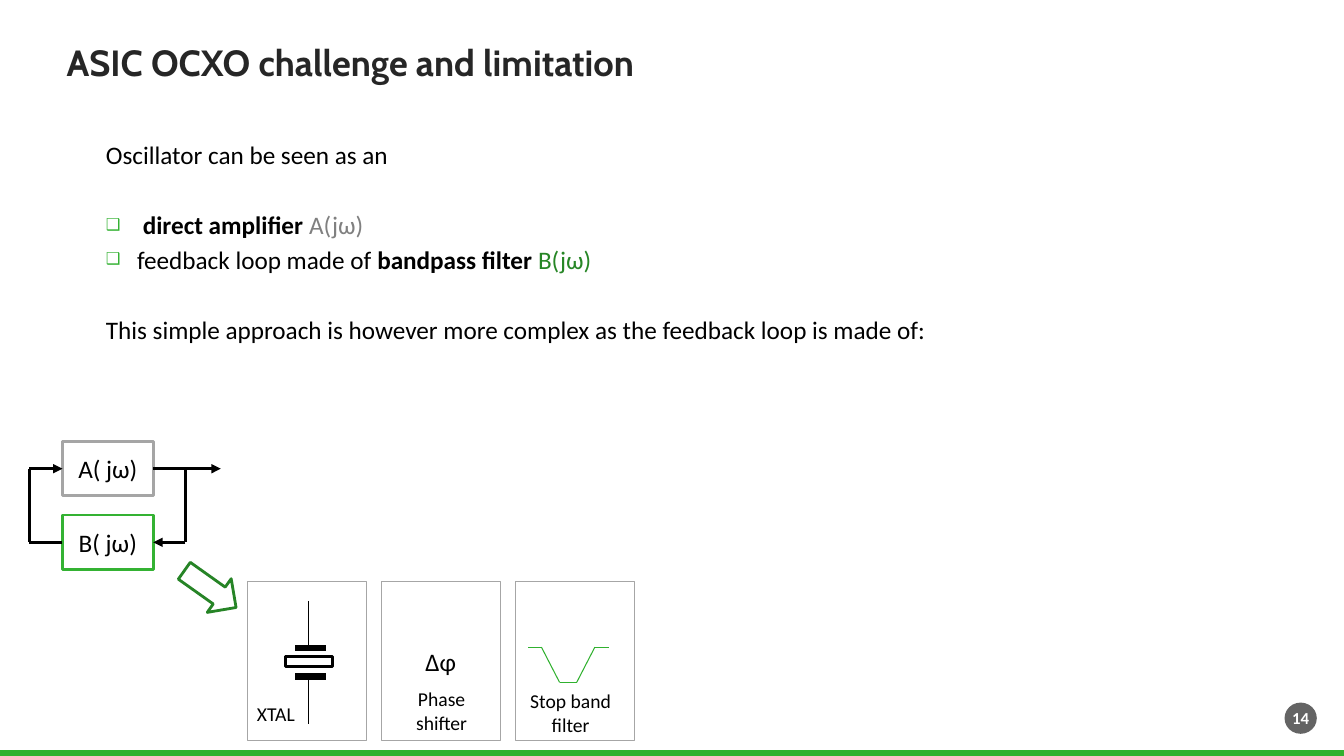
from pptx import Presentation
from pptx.dml.color import RGBColor as RGB
from pptx.enum.shapes import MSO_CONNECTOR as Conn, MSO_SHAPE as Form
from pptx.enum.text import MSO_ANCHOR as Anchor, MSO_AUTO_SIZE as Fit, PP_ALIGN as Align
from pptx.oxml.ns import qn
from pptx.util import Inches, Pt
from lxml.etree import SubElement as Sub

BLACK = RGB(0x00, 0x00, 0x00)
WHITE = RGB(0xFF, 0xFF, 0xFF)
INK = RGB(0x26, 0x26, 0x26)
DARK = RGB(0x64, 0x64, 0x64)
GRAY = RGB(0x80, 0x80, 0x80)
STEEL = RGB(0xA5, 0xA5, 0xA5)
FRAME = RGB(0xA6, 0xA6, 0xA6)
GREEN = RGB(0x34, 0xB2, 0x33)
BAND = RGB(0x30, 0xB1, 0x2F)
LEAF = RGB(0x27, 0x86, 0x26)
ARROW = RGB(0x26, 0x84, 0x26)


class Deck:
    """Holds the text style and the current slide, and draws its elements."""

    def __init__(self, font="Calibri", size=18):
        self.font, self.size = font, size
        self.show = Presentation()
        self.show.slide_width, self.show.slide_height = Inches(13.33), Inches(7.5)
        self.slide = self.show.slides.add_slide(self.show.slide_layouts[1])
        self.shapes = self.slide.shapes

    def run(self, para, text, color=BLACK, bold=False, size=None, font=None):
        """Add one styled run to a paragraph."""
        run = para.add_run()
        run.text = text
        run.font.name = font or self.font
        run.font.size = Pt(size or self.size)
        run.font.bold = bold
        run.font.color.rgb = color

    def place(self, shape, *box):
        """Move and size a placeholder."""
        shape.left, shape.top, shape.width, shape.height = map(Inches, box)
        frame = shape.text_frame
        frame.word_wrap, frame.auto_size = True, Fit.NONE
        return frame

    def title(self, text, *box):
        """Fill the title."""
        frame = self.place(self.shapes.title, *box)
        frame.vertical_anchor = Anchor.MIDDLE
        para = frame.paragraphs[0]
        para.alignment = Align.LEFT
        self.run(para, text, INK, True, 26, "Cabin")

    def body(self, items, *box):
        """Fill the body from (mark, space before, runs) items."""
        frame = self.place(self.slide.placeholders[1], *box)
        frame.vertical_anchor = Anchor.TOP
        for i, (mark, space, runs) in enumerate(items):
            para = frame.add_paragraph() if i else frame.paragraphs[0]
            props = para._p.get_or_add_pPr()
            props.set("marL", str(Inches(0.7 if mark else 0.39)))
            props.set("indent", str(Inches(-0.31 if mark else 0)))
            if mark:
                tint = Sub(props, qn("a:buClr"))
                Sub(tint, qn("a:srgbClr"), val=str(GREEN))
                Sub(props, qn("a:buSzPct"), val="65000")
                Sub(props, qn("a:buChar"), char=mark)
            else:
                Sub(props, qn("a:buNone"))
            para.alignment = Align.LEFT
            para.space_before = Pt(space)
            for text, color, bold in runs:
                self.run(para, text, color, bold)

    def shape(self, form, box, fill=None, line=None, width=1, text="", turn=0, **style):
        """Draw a preset shape with optional centred text."""
        shape = self.shapes.add_shape(form, *map(Inches, box))
        shape.shadow.inherit = False
        shape.rotation = turn
        if fill is None:
            shape.fill.background()
        else:
            shape.fill.solid()
            shape.fill.fore_color.rgb = fill
        if line is None:
            shape.line.fill.background()
        else:
            shape.line.color.rgb = line
            shape.line.width = Pt(width)
        if text:
            frame = shape.text_frame
            frame.margin_left = frame.margin_right = 0
            frame.margin_top = frame.margin_bottom = 0
            frame.vertical_anchor = Anchor.MIDDLE
            frame.paragraphs[0].alignment = Align.CENTER
            self.run(frame.paragraphs[0], text, **style)
        return shape

    def label(self, text, box, align=Align.CENTER):
        """Add a small caption."""
        frame = self.shapes.add_textbox(*map(Inches, box)).text_frame
        frame.word_wrap = True
        frame.paragraphs[0].alignment = align
        self.run(frame.paragraphs[0], text, size=14)

    def line(self, start, end, color=BLACK, width=2.25, head=False, begin=None, stop=None):
        """Draw a straight line, joined to (shape, side) pairs if given."""
        line = self.shapes.add_connector(Conn.STRAIGHT, *map(Inches, start + end))
        if begin:
            line.begin_connect(*begin)
        if stop:
            line.end_connect(*stop)
        line.line.color.rgb = color
        line.line.width = Pt(width)
        if head:
            Sub(line.get_or_add_ln(), qn("a:tailEnd"), type="triangle")
        Sub(line._element.spPr, qn("a:effectLst"))


def main():
    """Build the slide and save it."""
    deck = Deck()
    deck.line((0, 7.47), (13.33, 7.47), BAND, 4)
    deck.shape(Form.OVAL, (12.74, 6.97, 0.32, 0.31), DARK,
               text="14", color=WHITE, bold=True, size=12)
    deck.title("ASIC OCXO challenge and limitation", 0.56, 0.24, 9.06, 0.75)
    deck.body([
        (None, 0, [("Oscillator can be seen as an", BLACK, False)]),
        ("❑", 28.5, [(" direct amplifier ", BLACK, True), ("A(jω)", GRAY, False)]),
        ("❑", 3.3, [("feedback loop made of ", BLACK, False),
                    ("bandpass filter ", BLACK, True), ("B(jω)", LEAF, False)]),
        (None, 28.5, [("This simple approach is however more complex as "
                       "the feedback loop is made of:", BLACK, False)]),
    ], 0.56, 1.33, 12.17, 5.54)

    amp, loop = [
        deck.shape(Form.RECTANGLE, (0.62, top, 0.9, 0.54), WHITE, color, 2, name)
        for top, color, name in ((4.38, STEEL, "A( jω)"), (5.11, GREEN, "B( jω)"))
    ]
    left, right, high, low = 0.29, 1.84, 4.65, 5.38
    deck.line((1.52, high), (2.19, high), head=True, begin=(amp, 3))
    deck.line((left, high), (0.62, high), head=True, stop=(amp, 1))
    deck.line((right, low), (1.52, low), head=True, stop=(loop, 3))
    deck.line((left, low), (0.62, low), stop=(loop, 1))
    for x in (left, right):
        deck.line((x, high), (x, low))
    deck.shape(Form.RIGHT_ARROW, (1.77, 5.64, 0.63, 0.41), None, ARROW, 2, turn=35.4)

    for i, sign in enumerate(("", "Δφ", "")):
        deck.shape(Form.RECTANGLE, (2.45 + 1.33 * i, 5.77, 1.18, 1.58),
                   WHITE, FRAME, 0.5, sign)

    deck.shape(Form.RECTANGLE, (2.83, 6.51, 0.47, 0.1), None, BLACK, 2)
    for plate, tip in ((6.43, 5.96), (6.71, 7.18)):
        deck.line((2.93, plate), (3.23, plate), width=4.5)
        deck.line((3.06, tip), (3.06, plate), width=0.75)

    notch = [(5.24, 6.42), (5.37, 6.42), (5.55, 6.77),
             (5.72, 6.77), (5.9, 6.42), (6.04, 6.42)]
    for start, end in zip(notch, notch[1:]):
        deck.line(start, end, BAND, 0.75)

    deck.label("XTAL", (2.45, 6.91, 1.18, 0.34), Align.LEFT)
    deck.label("Phase shifter", (3.79, 6.77, 1.18, 0.57))
    deck.label("Stop band filter", (5.07, 6.79, 1.18, 0.57))
    deck.show.save("out.pptx")


if __name__ == "__main__":
    main()
